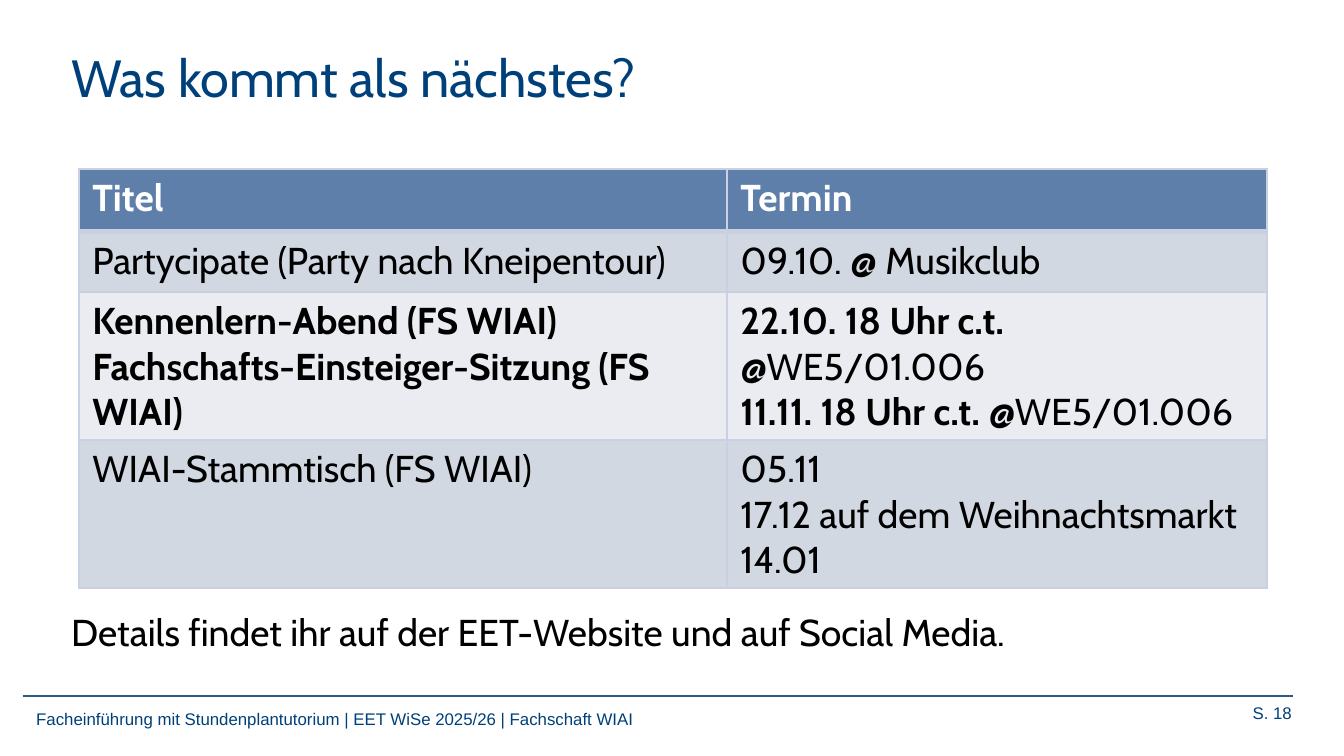
"""Builds the slide listing the upcoming dates of the student council."""
import dataclasses

import lxml.etree
import pptx
import pptx.dml.color
import pptx.enum.shapes
import pptx.enum.text
import pptx.oxml.ns
import pptx.slide
import pptx.table
import pptx.text.text
import pptx.util

RGBColor = pptx.dml.color.RGBColor
NAVY = RGBColor(0x00, 0x40, 0x7A)
RULE = RGBColor(0x2C, 0x58, 0x84)
HEADER = RGBColor(0x5D, 0x7F, 0xAA)
BAND_DARK = RGBColor(0xD2, 0xD8, 0xE2)
BAND_LIGHT = RGBColor(0xEA, 0xEC, 0xF1)
BORDER = RGBColor(0xC8, 0xD0, 0xE2)
BLACK = RGBColor(0x00, 0x00, 0x00)
WHITE = RGBColor(0xFF, 0xFF, 0xFF)

SLIDE_WIDTH, SLIDE_HEIGHT = 1344, 756
EMU_PER_PX = 9144000 / SLIDE_WIDTH
LEFT = pptx.enum.text.PP_ALIGN.LEFT
RIGHT = pptx.enum.text.PP_ALIGN.RIGHT


@dataclasses.dataclass(frozen=True)
class Run:
    text: str
    bold: bool = False


@dataclasses.dataclass(frozen=True)
class Label:
    text: str
    left: int
    top: int
    width: int
    height: int
    size: int
    font: str
    color: RGBColor
    align: pptx.enum.text.PP_ALIGN = LEFT


@dataclasses.dataclass(frozen=True)
class Row:
    height: int
    fill: RGBColor
    color: RGBColor
    cells: tuple[list[list[Run]], list[list[Run]]]


LABELS = [
    Label("Facheinführung mit Stundenplantutorium | EET WiSe 2025/26 | Fachschaft WIAI",
          23, 702, 988, 26, 9, "Arial", NAVY),
    Label("S. 18", 1148, 696, 157, 34, 9, "Arial", NAVY, RIGHT),
    Label("Was kommt als nächstes?", 58, 39, 1079, 126, 28, "Cabin", NAVY),
    Label("Details findet ihr auf der EET-Website und auf Social Media.",
          58, 603, 984, 59, 20, "Cabin", BLACK),
]

ROOM = Run("@WE5/01.006")
TABLE_LEFT, TABLE_TOP = 79, 169
COLUMN_WIDTHS = [648, 540]
ROWS = [
    Row(63, HEADER, WHITE, ([[Run("Titel", True)]], [[Run("Termin", True)]])),
    Row(60, BAND_DARK, BLACK, (
        [[Run("Partycipate (Party nach Kneipentour)")]],
        [[Run("09.10. @ Musikclub")]])),
    Row(148, BAND_LIGHT, BLACK, (
        [[Run("Kennenlern-Abend (FS WIAI)", True)],
         [Run("Fachschafts-Einsteiger-Sitzung (FS WIAI)", True)]],
        [[Run("22.10. 18 Uhr c.t. ", True), ROOM],
         [Run("11.11. 18 Uhr c.t. ", True), ROOM]])),
    Row(148, BAND_DARK, BLACK, (
        [[Run("WIAI-Stammtisch (FS WIAI)")]],
        [[Run("05.11")], [Run("17.12 auf dem Weihnachtsmarkt")], [Run("14.01")]])),
]


def px(length: int) -> pptx.util.Emu:
    return pptx.util.Emu(round(length * EMU_PER_PX))


def add_run(para: pptx.text.text._Paragraph, run: Run, size: int, font: str,
            color: RGBColor) -> None:
    span = para.add_run()
    span.text = run.text
    span.font.size = pptx.util.Pt(size)
    span.font.name = font
    span.font.bold = run.bold
    span.font.color.rgb = color


def add_label(page: pptx.slide.Slide, label: Label) -> None:
    box = page.shapes.add_textbox(
        px(label.left), px(label.top), px(label.width), px(label.height))
    box.text_frame.word_wrap = True
    para = box.text_frame.paragraphs[0]
    para.alignment = label.align
    add_run(para, Run(label.text), label.size, label.font, label.color)


def add_footer_rule(page: pptx.slide.Slide) -> None:
    rule = page.shapes.add_connector(
        pptx.enum.shapes.MSO_CONNECTOR.STRAIGHT, px(23), px(696), px(1293), px(696))
    rule.line.color.rgb = RULE
    rule.line.width = pptx.util.Pt(0.75)
    lxml.etree.SubElement(rule._element.spPr, pptx.oxml.ns.qn("a:effectLst"))


def add_borders(cell: pptx.table._Cell, top: int, bottom: int) -> None:
    properties = cell._tc.get_or_add_tcPr()
    for side, width in (("L", 1), ("R", 1), ("T", top), ("B", bottom)):
        line = lxml.etree.SubElement(
            properties, pptx.oxml.ns.qn(f"a:ln{side}"), w=str(pptx.util.Pt(width)))
        fill = lxml.etree.SubElement(line, pptx.oxml.ns.qn("a:solidFill"))
        lxml.etree.SubElement(fill, pptx.oxml.ns.qn("a:srgbClr"), val=str(BORDER))


def add_dates_table(page: pptx.slide.Slide) -> None:
    table = page.shapes.add_table(
        len(ROWS), len(COLUMN_WIDTHS), px(TABLE_LEFT), px(TABLE_TOP),
        px(sum(COLUMN_WIDTHS)), px(sum(row.height for row in ROWS))).table
    for column, width in zip(table.columns, COLUMN_WIDTHS):
        column.width = px(width)
    for row_index, row in enumerate(ROWS):
        table.rows[row_index].height = px(row.height)
        for column_index, paragraphs in enumerate(row.cells):
            cell = table.cell(row_index, column_index)
            add_borders(cell, 3 if row_index == 1 else 1, 3 if row_index == 0 else 1)
            cell.fill.solid()
            cell.fill.fore_color.rgb = row.fill
            for index, runs in enumerate(paragraphs):
                frame = cell.text_frame
                para = frame.add_paragraph() if index else frame.paragraphs[0]
                for run in runs:
                    add_run(para, run, 20, "Cabin", row.color)


def main() -> None:
    deck = pptx.Presentation()
    deck.slide_width, deck.slide_height = px(SLIDE_WIDTH), px(SLIDE_HEIGHT)
    page = deck.slides.add_slide(deck.slide_layouts[6])
    add_footer_rule(page)
    for label in LABELS:
        add_label(page, label)
    add_dates_table(page)
    deck.save("out.pptx")


if __name__ == "__main__":
    main()
